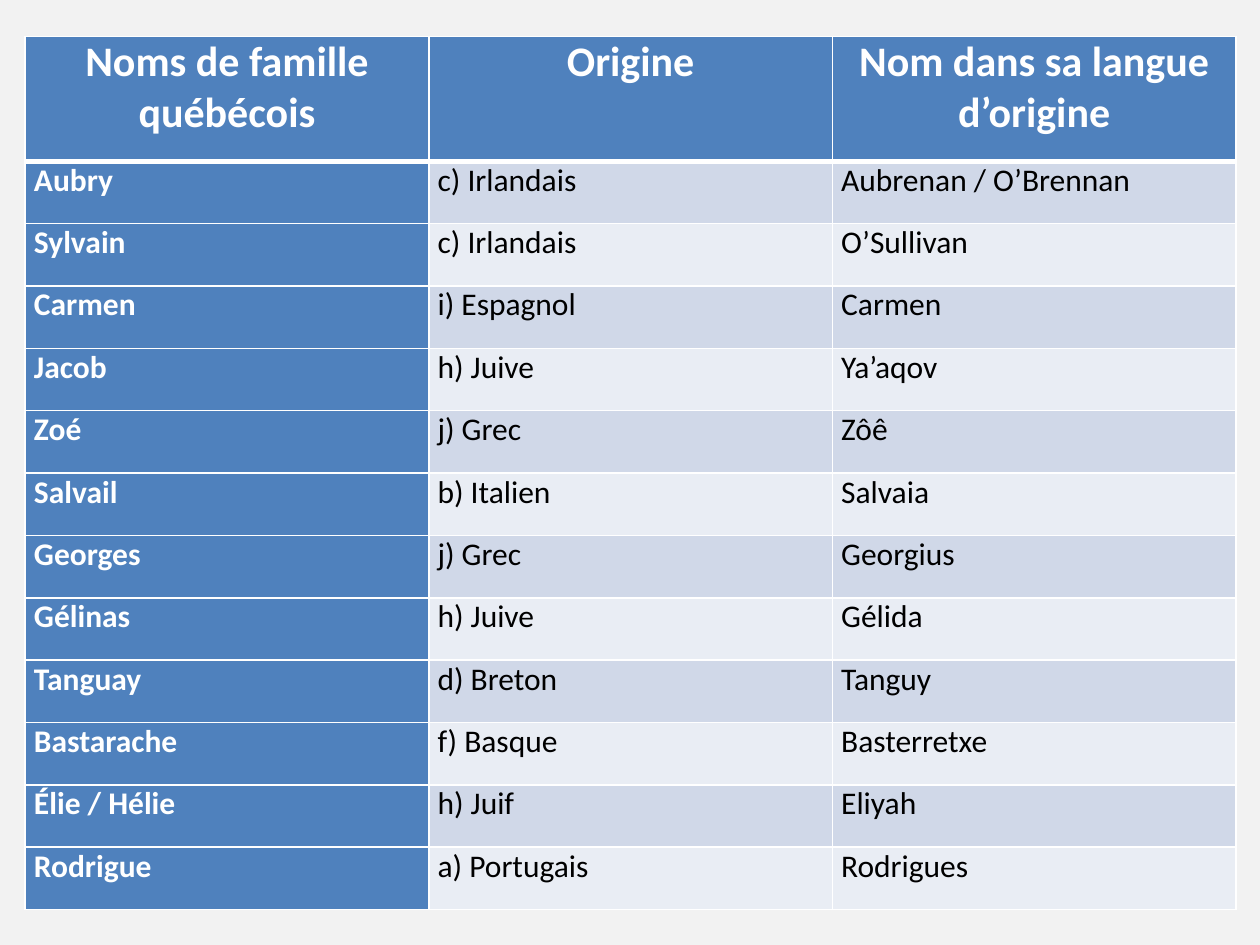
import pptx
import pptx.util
import pptx.dml.color
import pptx.enum.text
import pptx.oxml
import pptx.oxml.ns

Inches = pptx.util.Inches
Pt = pptx.util.Pt

COLORS = {
    "background": "F2F2F2",
    "accent": "4F81BD",
    "band_dark": "D0D8E8",
    "band_light": "E9EDF4",
    "white": "FFFFFF",
    "black": "000000",
}

HEADERS = ["Noms de famille québécois", "Origine", "Nom dans sa langue d’origine"]
NAMES = [
    ("Aubry", "c) Irlandais", "Aubrenan / O’Brennan"),
    ("Sylvain", "c) Irlandais", "O’Sullivan"),
    ("Carmen", "i) Espagnol", "Carmen"),
    ("Jacob", "h) Juive", "Ya’aqov"),
    ("Zoé", "j) Grec", "Zôê"),
    ("Salvail", "b) Italien", "Salvaia"),
    ("Georges", "j) Grec", "Georgius"),
    ("Gélinas", "h) Juive", "Gélida"),
    ("Tanguay", "d) Breton", "Tanguy"),
    ("Bastarache", "f) Basque", "Basterretxe"),
    ("Élie / Hélie", "h) Juif", "Eliyah"),
    ("Rodrigue", "a) Portugais", "Rodrigues"),
]

TABLE_WIDTH = 9.61
TABLE_HEIGHT = 6.93
CELL_FORMAT = {
    "margin_left": Inches(0.07),
    "margin_right": Inches(0.07),
    "margin_top": 0,
    "margin_bottom": 0,
}


def rgb(name):
    return pptx.dml.color.RGBColor.from_string(COLORS[name])


def apply_format(target, values):
    for attribute, value in values.items():
        setattr(target, attribute, value)


def fill_solid(fill, color):
    fill.solid()
    fill.fore_color.rgb = rgb(color)


def add_borders(cell, widths):
    properties = cell._tc.get_or_add_tcPr()
    for side, width in widths.items():
        properties.append(pptx.oxml.parse_xml(
            f'<a:ln{side} {pptx.oxml.ns.nsdecls("a")} w="{Pt(width)}">'
            f'<a:solidFill><a:srgbClr val="{COLORS["white"]}"/></a:solidFill>'
            f'</a:ln{side}>'
        ))


def write_cell(cell, text, fill, font_format, color, alignment, borders):
    add_borders(cell, borders)
    fill_solid(cell.fill, fill)
    apply_format(cell, CELL_FORMAT)
    paragraph = cell.text_frame.paragraphs[0]
    paragraph.alignment = alignment
    run = paragraph.add_run()
    run.text = text
    apply_format(run.font, {"name": "Calibri", **font_format})
    run.font.color.rgb = rgb(color)


def add_names_table(slide):
    rows = [HEADERS, *NAMES]
    table = slide.shapes.add_table(
        len(rows), len(HEADERS), Inches(0.2), Inches(0.29),
        Inches(TABLE_WIDTH), Inches(TABLE_HEIGHT),
    ).table
    for column in table.columns:
        column.width = Inches(TABLE_WIDTH / len(HEADERS))
    row_height = TABLE_HEIGHT / (len(rows) + 1)
    for row_index, texts in enumerate(rows):
        is_header = row_index == 0
        table.rows[row_index].height = Inches(row_height * (2 if is_header else 1))
        band = "band_dark" if row_index % 2 else "band_light"
        borders = {"L": 1, "R": 1, "T": 3 if row_index == 1 else 1, "B": 3 if is_header else 1}
        align = pptx.enum.text.PP_ALIGN
        alignment = align.CENTER if is_header else align.LEFT
        for column_index, text in enumerate(texts):
            strong = is_header or column_index == 0
            write_cell(
                table.cell(row_index, column_index), text,
                "accent" if strong else band,
                {"size": Pt(24 if is_header else 18), "bold": strong},
                "white" if strong else "black", alignment, borders,
            )


def main():
    presentation = pptx.Presentation()
    apply_format(presentation, {"slide_width": Inches(10), "slide_height": Inches(7.5)})
    slide = presentation.slides.add_slide(presentation.slide_layouts[6])
    fill_solid(slide.background.fill, "background")
    add_names_table(slide)
    presentation.save("out.pptx")


if __name__ == "__main__":
    main()
